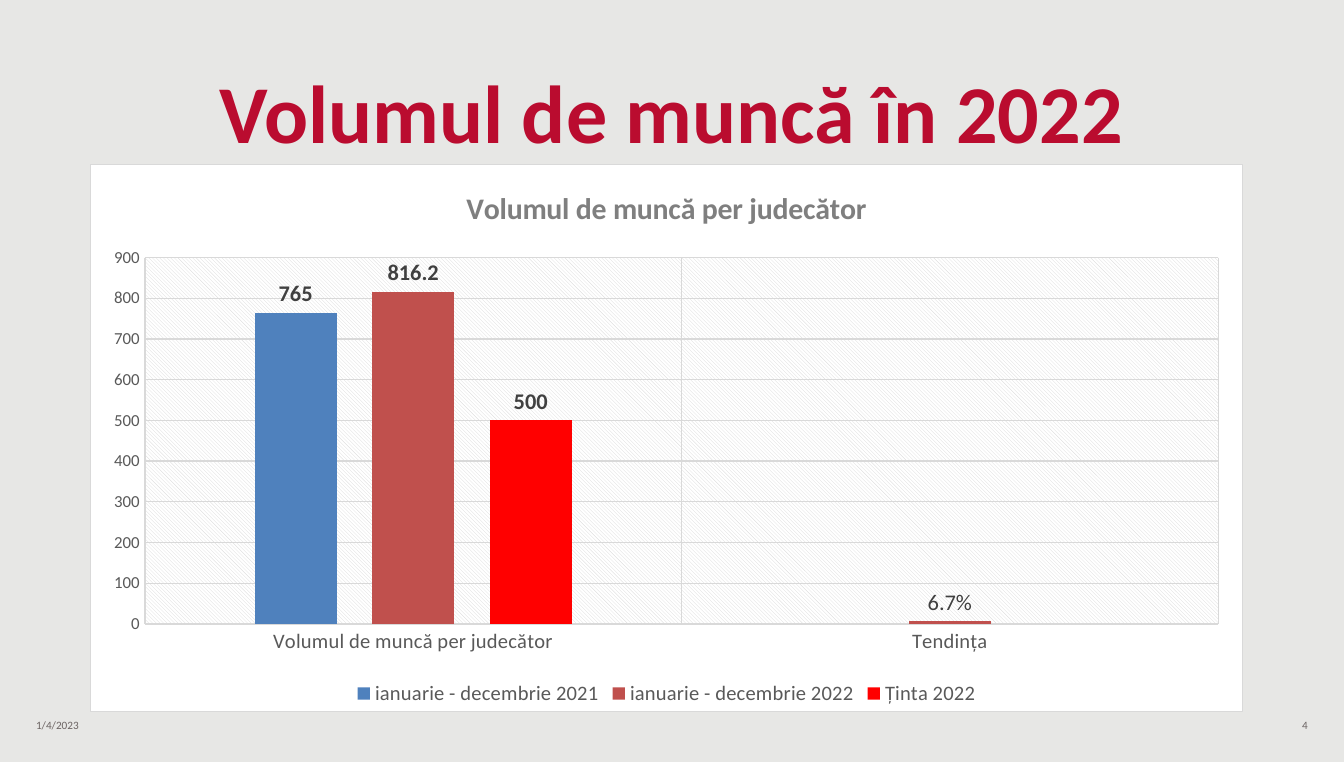
from lxml import etree
from pptx import Presentation
from pptx import util as u
from pptx.chart.data import CategoryChartData
from pptx.dml.color import RGBColor
from pptx.enum import chart as charts, text
from pptx.oxml import parse_xml
from pptx.oxml.ns import nsdecls, qn

FONT = "Calibri"
BACKGROUND = RGBColor(0xE7, 0xE7, 0xE5)
CRIMSON = RGBColor(0xBA, 0x0C, 0x2F)
FOOTER_GRAY = RGBColor(0x6C, 0x64, 0x63)
TITLE_GRAY = RGBColor(0x7F, 0x7F, 0x7F)
AXIS_GRAY = RGBColor(0x59, 0x59, 0x59)
LABEL_GRAY = RGBColor(0x40, 0x40, 0x40)
GRID_GRAY = RGBColor(0xD9, 0xD9, 0xD9)
BLACK = RGBColor(0, 0, 0)
WHITE = RGBColor(0xFF, 0xFF, 0xFF)

CATEGORIES = ["Volumul de muncă per judecător", "Tendința"]
SERIES = [
    ("ianuarie - decembrie 2021", (765, None), RGBColor(0x4F, 0x81, 0xBD), "General"),
    ("ianuarie - decembrie 2022", (816.2, 6.7), RGBColor(0xC0, 0x50, 0x4D), "0.0"),
    ("Ținta 2022", (500, None), RGBColor(0xFF, 0, 0), "General"),
]


def style_font(font, size, color, bold=False):
    """Set the typeface, size, colour and weight of a font."""
    font.name = FONT
    font.size = u.Pt(size)
    font.bold = bold
    font.color.rgb = color


def write_text(shape, box, words, size, color, align, anchor, bold=False):
    """Place a text shape and write one line in it."""
    shape.left, shape.top, shape.width, shape.height = map(u.Inches, box)
    frame = shape.text_frame
    frame.word_wrap = True
    frame.auto_size = text.MSO_AUTO_SIZE.NONE
    frame.vertical_anchor = anchor
    para = frame.paragraphs[0]
    para.alignment = align
    para.line_spacing = 0.9
    para.space_after = u.Pt(6)
    span = para.add_run()
    span.text = words
    style_font(span.font, size, color, bold)


def add_footer(page, left, words, align):
    """Add a small footer text at the bottom of the page."""
    shape = page.shapes.add_textbox(0, 0, 0, 0)
    write_text(shape, (left, 5.3, 2.33, 0.2), words, 6, FOOTER_GRAY, align, text.MSO_ANCHOR.MIDDLE)


def draw_line(line):
    """Give an axis or gridline its thin gray stroke."""
    line.color.rgb = GRID_GRAY
    line.width = u.Pt(0.75)


def style_axis(axis, size):
    """Format the labels, ticks and gridlines of an axis."""
    style_font(axis.tick_labels.font, size, AXIS_GRAY)
    axis.major_tick_mark = axis.minor_tick_mark = charts.XL_TICK_MARK.NONE
    axis.has_major_gridlines = True
    draw_line(axis.major_gridlines.format.line)


def style_areas(chart):
    """Fill the chart and plot areas and fix the plot's place."""
    root = chart.element
    frame = parse_xml(
        f'<c:spPr {nsdecls("c", "a")}><a:solidFill><a:srgbClr val="{WHITE}"/></a:solidFill>'
        f'<a:ln w="9525"><a:solidFill><a:srgbClr val="{GRID_GRAY}"/></a:solidFill></a:ln></c:spPr>')
    root.find(qn("c:chart")).addnext(frame)
    plot_area = root.find(qn("c:chart")).find(qn("c:plotArea"))
    plot_area.append(parse_xml(
        f'<c:spPr {nsdecls("c", "a")}><a:pattFill prst="ltDnDiag">'
        f'<a:fgClr><a:srgbClr val="{GRID_GRAY}"/></a:fgClr>'
        f'<a:bgClr><a:srgbClr val="{WHITE}"/></a:bgClr></a:pattFill>'
        '<a:ln><a:noFill/></a:ln></c:spPr>'))
    for layout in plot_area.findall(qn("c:layout")):
        plot_area.remove(layout)
    layout = etree.Element(qn("c:layout"))
    manual = etree.SubElement(layout, qn("c:manualLayout"))
    settings = [("layoutTarget", "inner"), ("xMode", "edge"), ("yMode", "edge"),
                ("x", "0.047"), ("y", "0.17"), ("w", "0.932"), ("h", "0.67")]
    for name, value in settings:
        etree.SubElement(manual, qn(f"c:{name}")).set("val", value)
    plot_area.insert(0, layout)


def style_series(series, color, number_format):
    """Colour a series and show its values above the bars."""
    series.format.fill.solid()
    series.format.fill.fore_color.rgb = color
    series.invert_if_negative = False
    labels = series.data_labels
    style_font(labels.font, 12, LABEL_GRAY, True)
    labels.show_value = True
    labels.number_format = number_format
    labels.number_format_is_linked = False
    labels.position = charts.XL_LABEL_POSITION.OUTSIDE_END


def add_workload_chart(page):
    """Add the column chart of workload per judge."""
    data = CategoryChartData()
    data.categories = CATEGORIES
    for name, values, _, _ in SERIES:
        data.add_series(name, values)
    box = map(u.Inches, (0.67, 1.22, 8.58, 4.08))
    chart = page.shapes.add_chart(charts.XL_CHART_TYPE.COLUMN_CLUSTERED, *box, data).chart
    style_font(chart.font, 10, BLACK)
    chart.has_title = True
    span = chart.chart_title.text_frame.paragraphs[0].add_run()
    span.text = CATEGORIES[0]
    style_font(span.font, 16, TITLE_GRAY, True)
    chart.chart_title.include_in_layout = False

    style_axis(chart.category_axis, 11)
    draw_line(chart.category_axis.format.line)
    style_axis(chart.value_axis, 9)
    chart.value_axis.format.line.fill.background()
    chart.value_axis.minimum_scale = 0
    chart.value_axis.maximum_scale = 900
    chart.value_axis.major_unit = 100
    chart.has_legend = True
    chart.legend.position = charts.XL_LEGEND_POSITION.BOTTOM
    chart.legend.include_in_layout = False
    style_font(chart.legend.font, 11, AXIS_GRAY)

    plot = chart.plots[0]
    plot.vary_by_categories = False
    plot.gap_width = 267
    plot.overlap = -43
    for series, (_, _, color, number_format) in zip(plot.series, SERIES):
        style_series(series, color, number_format)
    trend_label = plot.series[1].points[1].data_label
    span = trend_label.text_frame.paragraphs[0].add_run()
    span.text = "6.7%"
    style_font(span.font, 12, LABEL_GRAY)
    trend_label.position = charts.XL_LABEL_POSITION.OUTSIDE_END
    style_areas(chart)


def main():
    """Build the workload slide and save it."""
    deck = Presentation()
    deck.slide_width, deck.slide_height = u.Inches(10), u.Inches(5.67)
    page = deck.slides.add_slide(deck.slide_layouts[5])
    page.background.fill.solid()
    page.background.fill.fore_color.rgb = BACKGROUND
    add_footer(page, 0.17, "1/4/2023", text.PP_ALIGN.LEFT)
    add_footer(page, 7.5, "4", text.PP_ALIGN.RIGHT)
    write_text(page.shapes.title, (0.75, 0.74, 8.5, 0.51), "Volumul de muncă în 2022", 44,
               CRIMSON, text.PP_ALIGN.CENTER, text.MSO_ANCHOR.BOTTOM, True)
    add_workload_chart(page)
    deck.save("out.pptx")


if __name__ == "__main__":
    main()
